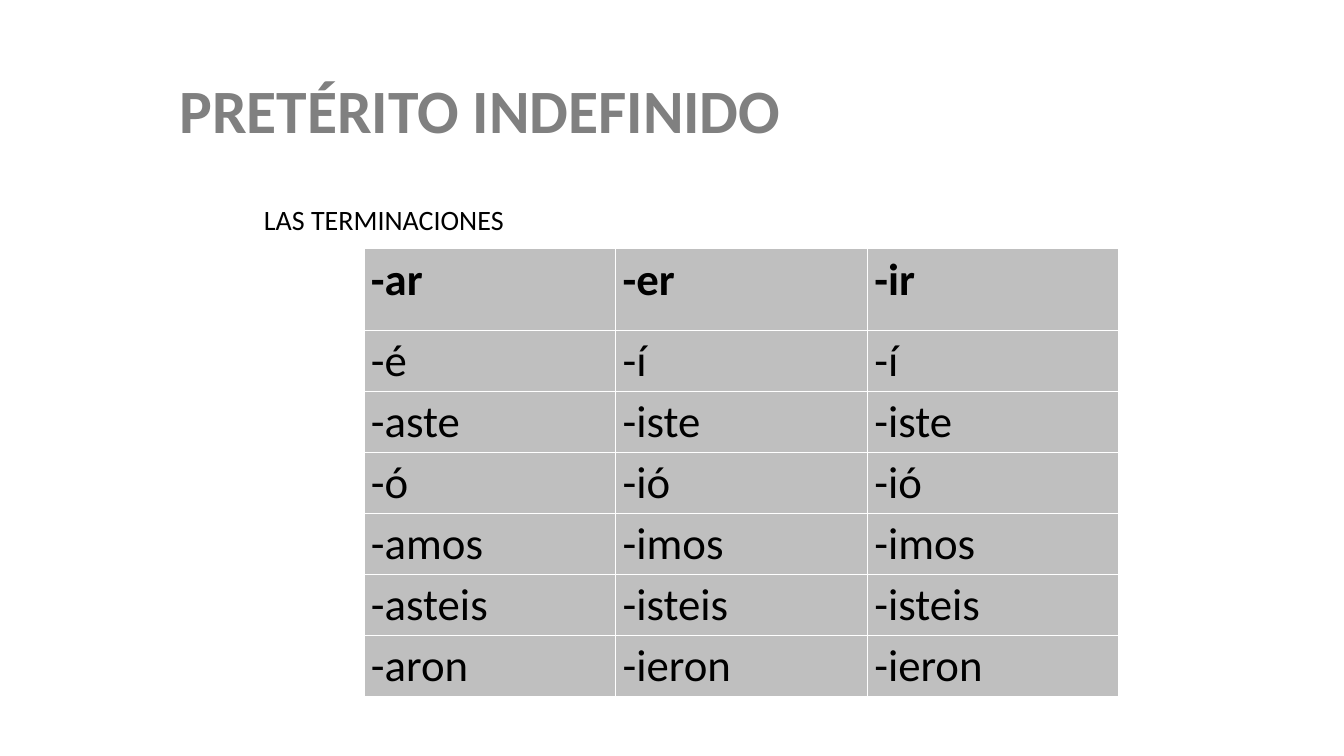
from pptx import Presentation
from pptx.dml.color import RGBColor
from pptx.enum import text
from pptx.util import Pt

COLORS = {"title": "808080", "text": "000000", "cell": "BFBFBF"}
FONT = "Calibri"
ENDINGS = [
    ("-ar", "-er", "-ir"),
    ("-é", "-í", "-í"),
    ("-aste", "-iste", "-iste"),
    ("-ó", "-ió", "-ió"),
    ("-amos", "-imos", "-imos"),
    ("-asteis", "-isteis", "-isteis"),
    ("-aron", "-ieron", "-ieron"),
]


def write(tf, content, size, color, bold=False, spacing=0.9):
    tf.text = content
    p = tf.paragraphs[0]
    p.line_spacing = spacing
    font = p.runs[0].font
    font.name, font.size, font.bold = FONT, Pt(size), bold
    font.color.rgb = RGBColor.from_string(COLORS[color])
    return p


def add_text(s, box, content, size, color, bold=False, anchor=text.MSO_ANCHOR.TOP):
    tf = s.shapes.add_textbox(*map(Pt, box)).text_frame
    tf.word_wrap = True
    tf.vertical_anchor = anchor
    return write(tf, content, size, color, bold)


def add_endings(s, left, top, col_width, header_height, row_height):
    rows, cols = len(ENDINGS), len(ENDINGS[0])
    height = header_height + row_height * (rows - 1)
    table = s.shapes.add_table(
        rows, cols, Pt(left), Pt(top), Pt(col_width * cols), Pt(height)
    ).table
    for column in table.columns:
        column.width = Pt(col_width)
    for i, (row, endings) in enumerate(zip(table.rows, ENDINGS)):
        row.height = Pt(row_height if i else header_height)
        for cell, ending in zip(row.cells, endings):
            cell.margin_left = cell.margin_right = Pt(5)
            cell.margin_top = cell.margin_bottom = Pt(0)
            cell.fill.solid()
            cell.fill.fore_color.rgb = RGBColor.from_string(COLORS["cell"])
            p = write(cell.text_frame, ending, 32, "text", i == 0, 1.07)
            p.space_after = Pt(8)


def main():
    prs = Presentation()
    prs.slide_width, prs.slide_height = Pt(960), Pt(540)
    s = prs.slides.add_slide(prs.slide_layouts[6])
    add_text(s, (121, 28.8, 773.3, 104.4), "PRETÉRITO INDEFINIDO", 44, "title",
             True, text.MSO_ANCHOR.MIDDLE)
    p = add_text(s, (109.4, 144, 784, 342.7), "LAS TERMINACIONES", 20, "text")
    p.space_before = Pt(5)
    p._p.get_or_add_pPr().set("marL", str(Pt(72)))
    add_endings(s, 260, 177.8, 179.8, 58.3, 43.56)
    prs.save("out.pptx")


if __name__ == "__main__":
    main()
